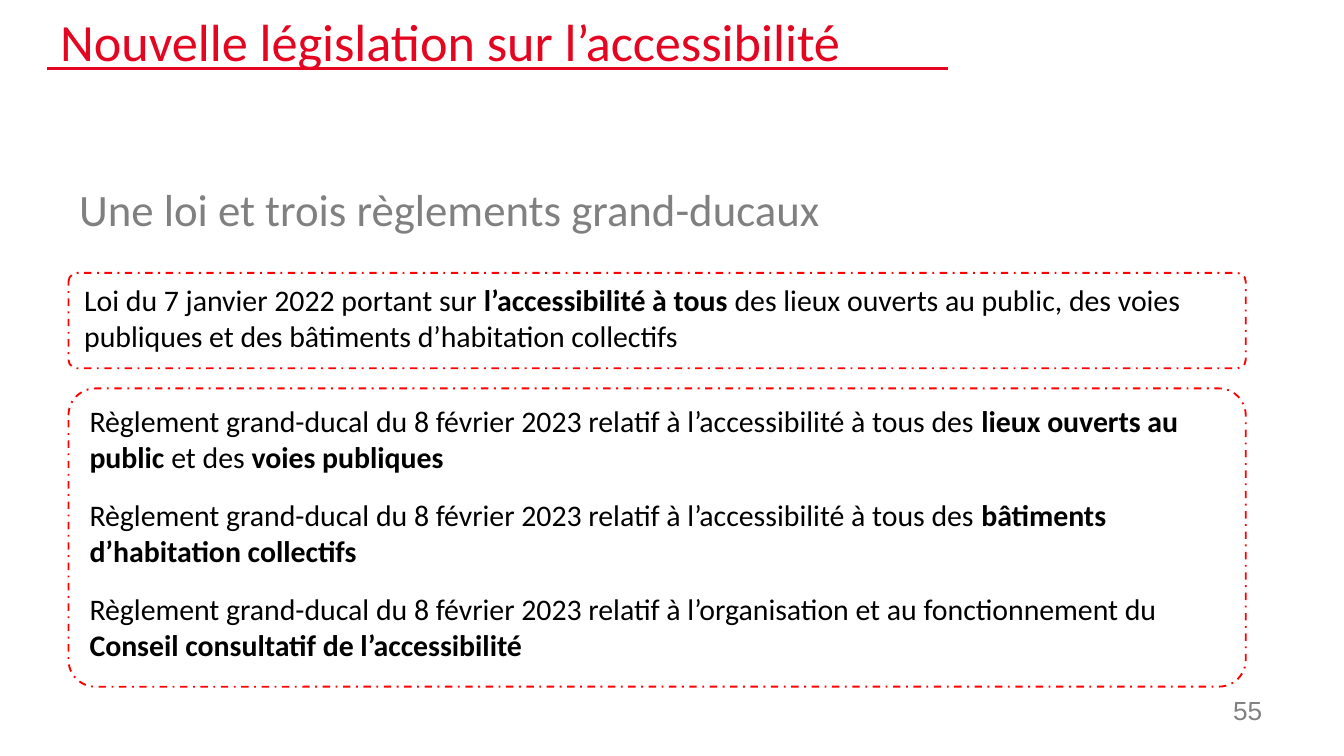
"""Build the slide that lists the law and the regulations on accessibility."""
from dataclasses import dataclass

from lxml.etree import SubElement
from pptx import Presentation
from pptx.dml.color import RGBColor
from pptx.enum.dml import MSO_LINE
from pptx.enum.shapes import MSO_CONNECTOR, MSO_SHAPE
from pptx.enum.text import MSO_ANCHOR, PP_ALIGN
from pptx.oxml.ns import qn
from pptx.util import Pt

COLOURS = {"title": "E40520", "frame": "FF0000", "grey": "808080", "text": "000000"}


@dataclass(frozen=True)
class Area:
    """A rectangle in points."""
    left: float
    top: float
    width: float
    height: float

    def lengths(self) -> list[Pt]:
        """Return the rectangle as slide lengths."""
        return [Pt(value) for value in (self.left, self.top, self.width, self.height)]


@dataclass(frozen=True)
class Span:
    """A piece of text with one weight."""
    text: str
    bold: bool = False


@dataclass(frozen=True)
class Label:
    """A single line of text with its format."""
    text: str
    area: Area
    size: float
    colour: str
    font: str = "Calibri"
    anchor: MSO_ANCHOR = MSO_ANCHOR.MIDDLE
    align: PP_ALIGN = PP_ALIGN.LEFT


@dataclass(frozen=True)
class Frame:
    """A dashed frame around legal texts."""
    area: Area
    paragraphs: list[list[Span]]


REGULATION = "Règlement grand-ducal du 8 février 2023 relatif à "
FOR_ALL = REGULATION + "l’accessibilité à tous des "

LABELS = [
    Label("Nouvelle législation sur l’accessibilité", Area(25.2, 7.2, 487.4, 29.5), 28, "title"),
    Label("55", Area(632.2, 368.6, 51.1, 29.5), 14, "grey", "Arial", MSO_ANCHOR.TOP, PP_ALIGN.RIGHT),
    Label("Une loi et trois règlements grand-ducaux", Area(35.3, 72, 632.2, 79.2), 24, "grey"),
]
FRAMES = [
    Frame(Area(36.7, 146.2, 630.7, 51.1), [
        [Span("Loi du 7 janvier 2022 portant sur "), Span("l’accessibilité à tous ", True),
         Span("des lieux ouverts au public, des voies publiques et des bâtiments d’habitation collectifs")],
    ]),
    Frame(Area(36.7, 208.1, 630.7, 159.8), [
        [Span(FOR_ALL), Span("lieux ouverts au public ", True), Span("et des "),
         Span("voies publiques", True)],
        [Span(FOR_ALL), Span("bâtiments d’habitation collectifs", True)],
        [Span(REGULATION + "l’organisation et au fonctionnement du "),
         Span("Conseil consultatif de l’accessibilité", True)],
    ]),
]


def colour_of(name: str) -> RGBColor:
    """Return the named colour."""
    return RGBColor.from_string(COLOURS[name])


def apply(target, values: dict) -> None:
    """Set every value on the target."""
    for name, value in values.items():
        setattr(target, name, value)


def add_span(para, span: Span, size: float, colour: str, font: str = "Calibri") -> None:
    """Add a formatted run to a paragraph."""
    run = para.add_run()
    run.text = span.text
    apply(run.font, {"size": Pt(size), "name": font, "bold": span.bold})
    run.font.color.rgb = colour_of(colour)


def draw_label(page, label: Label) -> None:
    """Draw a label as a text box."""
    box = page.shapes.add_textbox(*label.area.lengths())
    apply(box.text_frame, {"word_wrap": True, "vertical_anchor": label.anchor})
    para = box.text_frame.paragraphs[0]
    para.alignment = label.align
    add_span(para, Span(label.text), label.size, label.colour, label.font)


def draw_frame(page, frame: Frame) -> None:
    """Draw a rounded frame with its paragraphs."""
    box = page.shapes.add_shape(MSO_SHAPE.ROUNDED_RECTANGLE, *frame.area.lengths())
    box.adjustments[0] = 0.09
    box.shadow.inherit = False
    box.fill.background()
    box.line.color.rgb = colour_of("frame")
    apply(box.line, {"width": Pt(1), "dash_style": MSO_LINE.DASH_DOT})
    body = box.text_frame
    apply(body, {"word_wrap": True, "vertical_anchor": MSO_ANCHOR.TOP})
    for index, spans in enumerate(frame.paragraphs):
        para = body.add_paragraph() if index else body.paragraphs[0]
        apply(para, {"alignment": PP_ALIGN.LEFT, "space_after": Pt(12)})
        for span in spans:
            add_span(para, span, 16, "text")


def draw_rule(page, left: float, right: float, height: float) -> None:
    """Draw the line under the title."""
    rule = page.shapes.add_connector(
        MSO_CONNECTOR.STRAIGHT, Pt(right), Pt(height), Pt(left), Pt(height))
    rule.line.color.rgb = colour_of("title")
    rule.line.width = Pt(1.5)
    SubElement(rule._element.spPr, qn("a:effectLst"))


def main() -> None:
    """Build and save the deck."""
    deck = Presentation()
    apply(deck, {"slide_width": Pt(720), "slide_height": Pt(405)})
    page = deck.slides.add_slide(deck.slide_layouts[6])
    draw_rule(page, 25.2, 507.6, 36.7)
    for label in LABELS:
        draw_label(page, label)
    for frame in FRAMES:
        draw_frame(page, frame)
    deck.save("out.pptx")


if __name__ == "__main__":
    main()
